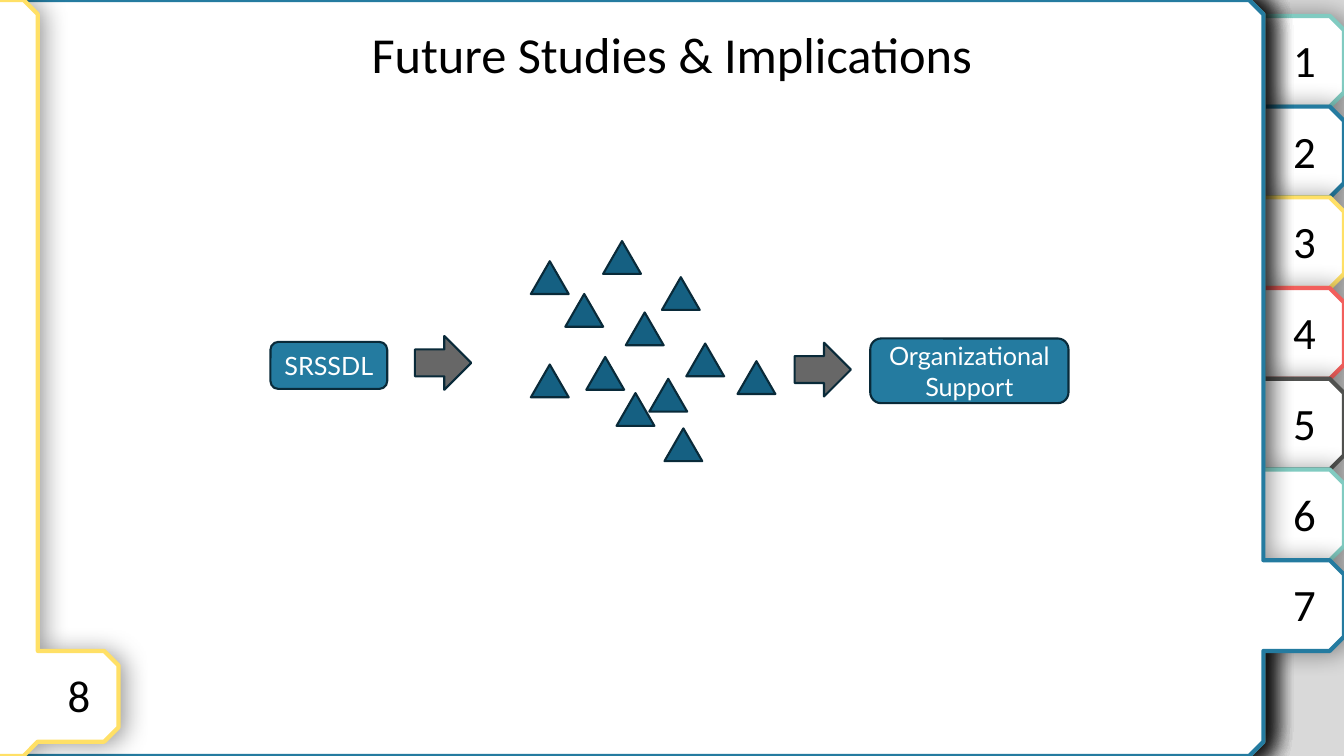
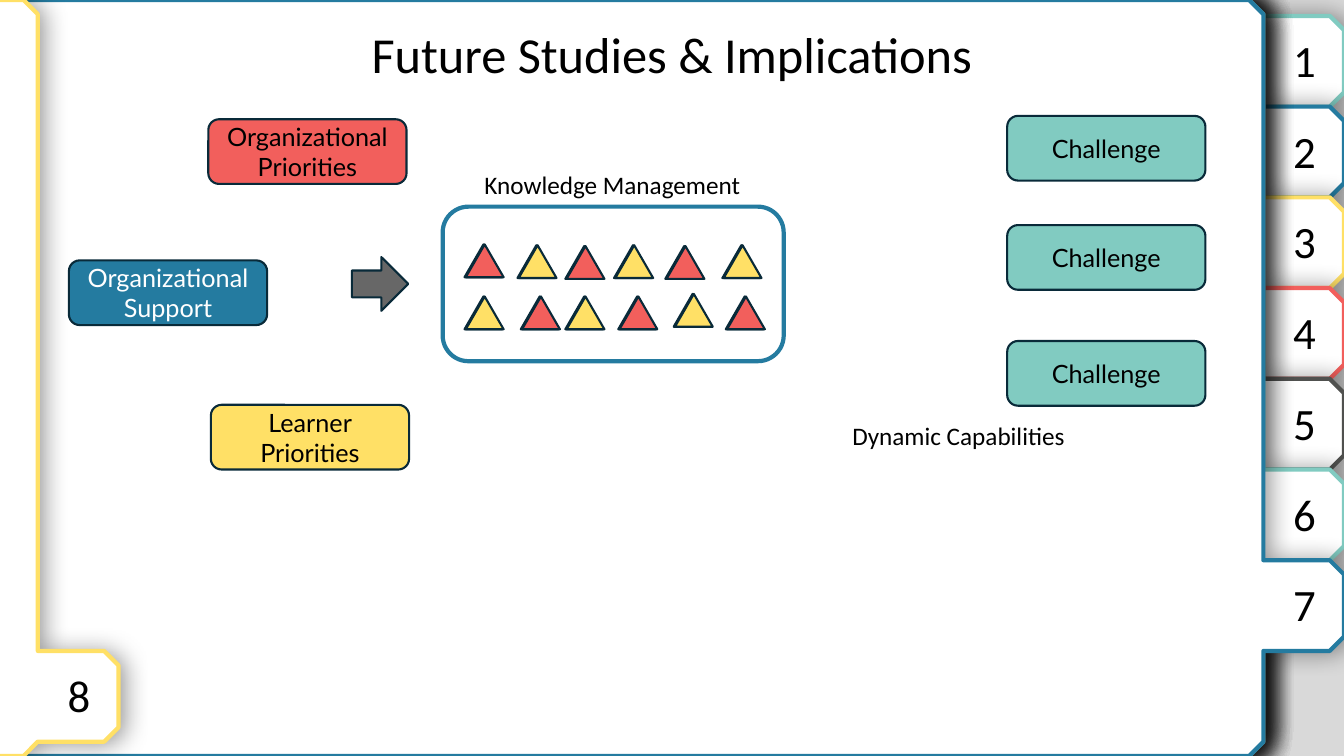
from typing import NamedTuple, Optional

from lxml import etree
from pptx import Presentation
from pptx import util as u
from pptx.dml.color import RGBColor
from pptx.enum import shapes, text
from pptx.oxml import ns

# Grid: 160 columns by 90 rows of square cells
COLUMNS, ROWS = 160, 90
SLIDE_WIDTH, SLIDE_HEIGHT = u.Inches(13.333), u.Inches(7.5)
CELL = SLIDE_HEIGHT / ROWS

# Colours
WHITE = RGBColor(0xFF, 0xFF, 0xFF)
BLACK = RGBColor(0x00, 0x00, 0x00)
DESK = RGBColor(0xD9, 0xD9, 0xD9)
TEAL = RGBColor(0x81, 0xCB, 0xC1)
BLUE = RGBColor(0x24, 0x7B, 0xA0)
YELLOW = RGBColor(0xFF, 0xE0, 0x66)
RED = RGBColor(0xF2, 0x5F, 0x5C)
CHARCOAL = RGBColor(0x50, 0x51, 0x4F)
DEEP_BLUE = RGBColor(0x15, 0x60, 0x82)
GREY = RGBColor(0x67, 0x67, 0x67)
OUTLINE = RGBColor(0x09, 0x2A, 0x39)

TITLE = "Future Studies & Implications"
HEADING_FONT, BOX_FONT = "Calibri", "Lato"

# Folder sheets with numbered tabs
SHEET_EDGE, CORNER = 150.4, 1.7
TAB_WIDTH, TAB_HEIGHT, FIRST_TAB = 9.6, 10.8, 1.9
TURNED_SHIFT = -145.9
SHEET_COLOURS = (TEAL, BLUE, YELLOW, RED, CHARCOAL, TEAL, BLUE, YELLOW)

# Sizes of the repeated diagram parts
BOX_SIZE, ARROW_SIZE, TRIANGLE_SIZE = (23.6, 7.7), (6.7, 6.4), (4.5, 3.9)
LABEL_SIZE = (35.2, 4.8)


class Area(NamedTuple):
    left: float
    top: float
    width: float
    height: float


class Box(NamedTuple):
    words: str
    left: float
    top: float
    fill: RGBColor
    ink: RGBColor
    size: tuple[float, float] = BOX_SIZE


class Label(NamedTuple):
    words: str
    left: float
    top: float


def cells(count: float) -> int:
    return round(count * CELL)


def write(frame, words: str, size: float, font: str, colour: RGBColor) -> None:
    frame.word_wrap = True
    paragraph = frame.paragraphs[0]
    paragraph.text = words
    paragraph.alignment = text.PP_ALIGN.CENTER
    paragraph.font.size = u.Pt(size)
    paragraph.font.name = font
    paragraph.font.color.rgb = colour


def add_text(parent, area: Area, words: str, size: float) -> None:
    box = parent.add_textbox(*map(cells, area))
    write(box.text_frame, words, size, HEADING_FONT, BLACK)
    box.text_frame.auto_size = text.MSO_AUTO_SIZE.SHAPE_TO_FIT_TEXT


def paint(shape, fill: Optional[RGBColor], line: RGBColor, weight: float) -> None:
    shape.shadow.inherit = False
    if fill is None:
        shape.fill.background()
    else:
        shape.fill.solid()
        shape.fill.fore_color.rgb = fill
    shape.line.color.rgb = line
    shape.line.width = u.Pt(weight)


def add_part(slide, kind, area: Area, fill: Optional[RGBColor],
             line: RGBColor = OUTLINE, weight: float = 1.5):
    part = slide.shapes.add_shape(kind, *map(cells, area))
    paint(part, fill, line, weight)
    return part


def cast_shadow(shape) -> None:
    effects = shape.element.spPr.find(ns.qn("a:effectLst"))
    shadow = etree.SubElement(effects, ns.qn("a:outerShdw"), blurRad=str(u.Pt(17)),
                              dist=str(u.Pt(3)), dir="0", algn="l", rotWithShape="0")
    colour = etree.SubElement(shadow, ns.qn("a:srgbClr"), val=str(BLACK))
    etree.SubElement(colour, ns.qn("a:alpha"), val="40000")


def add_sheet(slide, index: int, colour: RGBColor) -> None:
    """Draw one sheet; the last one is turned over to the left."""
    number = index + 1
    shift = TURNED_SHIFT if number == len(SHEET_COLOURS) else 0
    edge, tab_end = SHEET_EDGE, SHEET_EDGE + TAB_WIDTH
    tab_top = FIRST_TAB + index * TAB_HEIGHT
    tab_bottom = tab_top + TAB_HEIGHT
    corners = [
        (0, 0), (edge - CORNER, 0), (edge, CORNER),
        (edge, tab_top), (tab_end - CORNER, tab_top), (tab_end, tab_top + CORNER),
        (tab_end, tab_bottom - CORNER), (tab_end - CORNER, tab_bottom), (edge, tab_bottom),
        (edge, ROWS - CORNER), (edge - CORNER, ROWS), (0, ROWS),
    ]
    points = [(cells(x + shift), cells(y)) for x, y in corners]
    group = slide.shapes.add_group_shape()
    outline = group.shapes.build_freeform(*points[0])
    outline.add_line_segments(points[1:], close=True)
    sheet = outline.convert_to_shape()
    paint(sheet, WHITE, colour, 3)
    cast_shadow(sheet)
    add_text(group.shapes, Area(152.6 + shift, tab_top + 1.4, 5.4, 7.7), str(number), 32)


def add_folder_slide(deck):
    slide = deck.slides.add_slide(deck.slide_layouts[6])
    slide.background.fill.solid()
    slide.background.fill.fore_color.rgb = DESK
    for index, colour in enumerate(SHEET_COLOURS):
        add_sheet(slide, index, colour)
    add_text(slide.shapes, Area(25.4, 2.2, 109.2, 8.5), TITLE, 36)
    return slide


def add_box(slide, box: Box) -> None:
    part = add_part(slide, shapes.MSO_SHAPE.ROUNDED_RECTANGLE,
                    Area(box.left, box.top, *box.size), box.fill)
    write(part.text_frame, box.words, 18, BOX_FONT, box.ink)
    part.text_frame.vertical_anchor = text.MSO_ANCHOR.MIDDLE


def add_arrow(slide, left: float, top: float) -> None:
    add_part(slide, shapes.MSO_SHAPE.RIGHT_ARROW, Area(left, top, *ARROW_SIZE), GREY)


def add_triangle(slide, left: float, top: float, fill: RGBColor) -> None:
    add_part(slide, shapes.MSO_SHAPE.ISOSCELES_TRIANGLE,
             Area(left, top, *TRIANGLE_SIZE), fill)


# Slide 1: scattered knowledge
SCATTERED = (
    (63.2, 31.1), (67.3, 35), (71.8, 28.7), (69.8, 42.5), (74.5, 37.2), (73.4, 46.8),
    (77.3, 45.1), (78.8, 33), (81.7, 40.9), (79.1, 51), (87.8, 43), (63.2, 43.4),
)
SUPPORT_FLOW = (
    Box("SRSSDL", 32.2, 40.7, BLUE, WHITE, (13.9, 5.6)),
    Box("Organizational Support", 103.6, 40.3, BLUE, WHITE),
)

# Slide 2: managed knowledge
MANAGED_ROWS = (
    ((55.3, 29.1), (61.6, 29.2), (67.3, 29.3), (73.1, 29.2), (79.2, 29.3), (86, 29.2)),
    ((55.3, 35.3), (62, 35.3), (67.3, 35.3), (73.6, 35.3), (80.2, 35), (86.4, 35.3)),
)
FRONT_OFFSET = 0.15
PRIORITIES = (
    Box("Organizational Support", 8.2, 31, BLUE, WHITE),
    Box("Organizational Priorities", 24.8, 14.2, RED, BLACK),
    Box("Learner Priorities", 25.1, 48.2, YELLOW, BLACK),
)
CHALLENGES = tuple(Box("Challenge", 119.9, top, TEAL, BLACK) for top in (13.8, 26.8, 40.6))
LABELS = (
    Label("Knowledge Management", 55.3, 19.6),
    Label("Dynamic Capabilities", 96.5, 49.4),
)


def add_scattered_slide(deck) -> None:
    slide = add_folder_slide(deck)
    for left, top in SCATTERED:
        add_triangle(slide, left, top, DEEP_BLUE)
    for box in SUPPORT_FLOW:
        add_box(slide, box)
    add_arrow(slide, 49.4, 40)
    add_arrow(slide, 94.6, 40.8)


def add_managed_slide(deck) -> None:
    slide = add_folder_slide(deck)
    # Each triangle pairs a blue back with an alternating red or yellow front
    for row, spots in enumerate(MANAGED_ROWS):
        for column, (left, top) in enumerate(spots):
            front = (RED, YELLOW)[(row + column) % 2]
            add_triangle(slide, left, top, DEEP_BLUE)
            add_triangle(slide, left + FRONT_OFFSET, top, front)
    add_part(slide, shapes.MSO_SHAPE.ROUNDED_RECTANGLE,
             Area(52.7, 24.6, 40.6, 18.4), None, BLUE, 3)
    for box in PRIORITIES + CHALLENGES:
        add_box(slide, box)
    add_arrow(slide, 41.9, 30.6)
    for label in LABELS:
        add_text(slide.shapes, Area(label.left, label.top, *LABEL_SIZE), label.words, 18)


def main() -> None:
    deck = Presentation()
    deck.slide_width, deck.slide_height = SLIDE_WIDTH, SLIDE_HEIGHT
    add_scattered_slide(deck)
    add_managed_slide(deck)
    deck.save("out.pptx")


if __name__ == "__main__":
    main()
